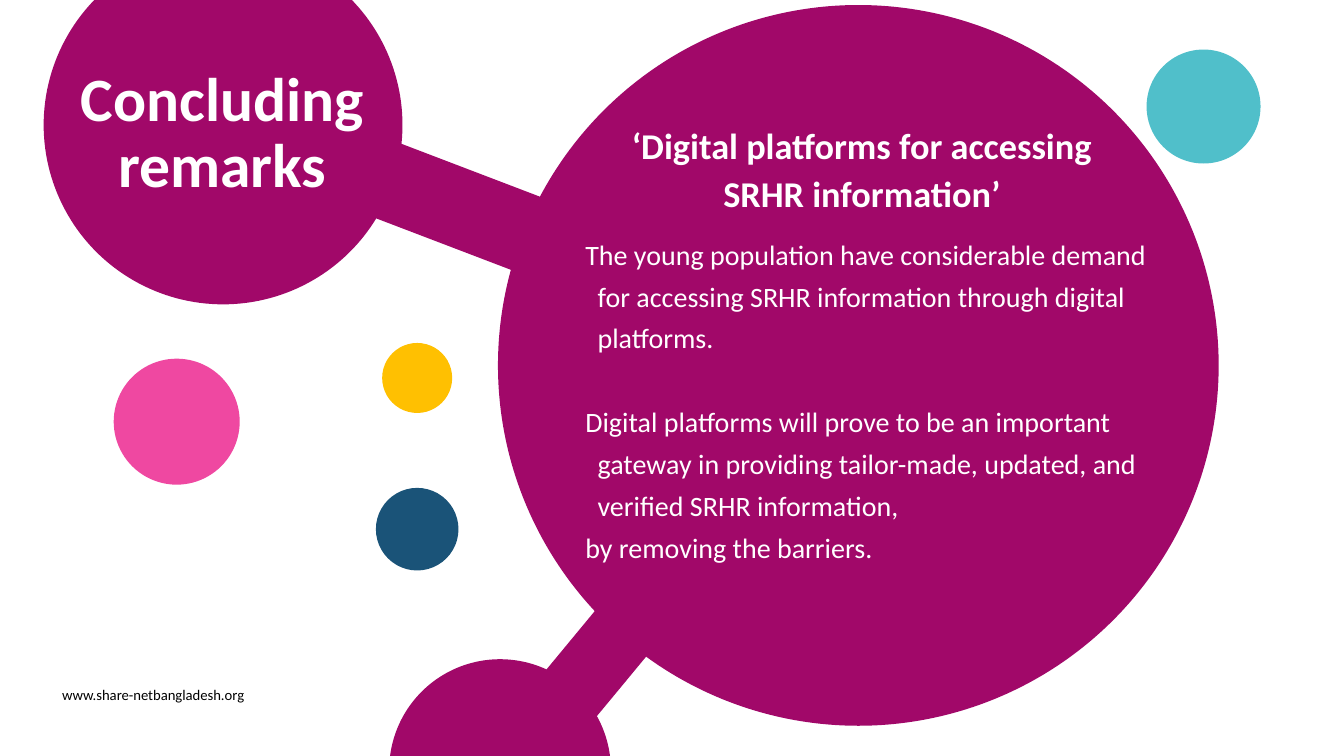
from pptx import Presentation
from pptx.dml.color import RGBColor
from pptx.enum.shapes import MSO_SHAPE as Shape
from pptx.enum.text import MSO_ANCHOR as Anchor, PP_ALIGN as Align
from pptx.util import Pt

PLUM = RGBColor(0xA1, 0x08, 0x69)
AMBER = RGBColor(0xFF, 0xC0, 0x01)
TEAL = RGBColor(0x50, 0xBF, 0xCA)
PINK = RGBColor(0xEF, 0x48, 0xA1)
NAVY = RGBColor(0x1A, 0x53, 0x78)
WHITE = RGBColor(0xFF, 0xFF, 0xFF)
BLACK = RGBColor(0, 0, 0)


class Page:
    font = "Calibri"

    def __init__(self, slide):
        self.slide = slide

    def block(self, kind, left, top, width, height, color, turn=0):
        box = self.slide.shapes.add_shape(
            kind, Pt(left), Pt(top), Pt(width), Pt(height))
        box.rotation = turn
        box.shadow.inherit = False
        box.fill.solid()
        box.fill.fore_color.rgb = color
        box.line.fill.background()

    def disc(self, left, top, size, color):
        self.block(Shape.OVAL, left, top, size, size, color)

    def bar(self, left, top, width, height, turn):
        self.block(Shape.RECTANGLE, left, top, width, height, PLUM, turn)

    def frame(self, left, top, width, height, anchor=Anchor.TOP, inset=7.2):
        box = self.slide.shapes.add_textbox(
            Pt(left), Pt(top), Pt(width), Pt(height))
        frame = box.text_frame
        frame.word_wrap = True
        frame.vertical_anchor = anchor
        frame.margin_left = Pt(inset)
        return frame

    def add_text(self, para, text, size, color=WHITE, bold=False):
        run = para.add_run()
        run.text = text
        run.font.name = self.font
        run.font.size = Pt(size)
        run.font.bold = bold
        run.font.color.rgb = color

    def head(self, left, top, width, height, text, size, lead):
        """Add a bold heading centred both ways."""
        para = self.frame(left, top, width, height, Anchor.MIDDLE, 0).paragraphs[0]
        para.alignment = Align.CENTER
        para.line_spacing = lead
        self.add_text(para, text, size, bold=True)

    def body(self, left, top, width, height, items):
        """Add hanging paragraphs from (text, space before) pairs."""
        frame = self.frame(left, top, width, height)
        for i, (text, gap) in enumerate(items):
            para = frame.add_paragraph() if i else frame.paragraphs[0]
            props = para._p.get_or_add_pPr()
            props.set("marL", str(Pt(27.4)))
            props.set("indent", str(Pt(-8.8)))
            para.line_spacing = Pt(30)
            if gap:
                para.space_before = Pt(gap)
            self.add_text(para, text, 20)


def main():
    deck = Presentation()
    deck.slide_width, deck.slide_height = Pt(960), Pt(540)
    page = Page(deck.slides.add_slide(deck.slide_layouts[6]))

    page.disc(355.7, 3.6, 514.8, PLUM)
    page.disc(278, 470.9, 158.4, PLUM)
    page.bar(395.3, 450, 59.8, 49, 309.6)
    page.disc(31.2, -38.9, 256.3, PLUM)
    page.bar(234.7, 115.2, 159.1, 56.2, 20.9)

    site = page.frame(37.4, 486, 150, 20.2).paragraphs[0]
    page.add_text(site, "www.share-netbangladesh.org", 10.5, BLACK)

    page.disc(273, 245, 50, AMBER)
    page.disc(819, 35.4, 81.4, TEAL)
    page.disc(81.2, 256.2, 90, PINK)
    page.disc(268.5, 348.5, 59, NAVY)

    page.head(56.2, 21.6, 212.4, 149, "Concluding remarks", 44, 0.9)
    page.body(392.4, 159.8, 453.6, 283, [
        ("The young population have considerable demand for accessing "
         "SRHR information through digital platforms.", 0),
        ("Digital platforms will prove to be an important gateway in "
         "providing tailor-made, updated, and verified SRHR information,", 30),
        ("by removing the barriers.", 0),
    ])
    page.head(448.6, 78.5, 341.3, 81.4,
              "‘Digital platforms for accessing SRHR information’", 25.9, 1.1)
    deck.save("out.pptx")


if __name__ == "__main__":
    main()
